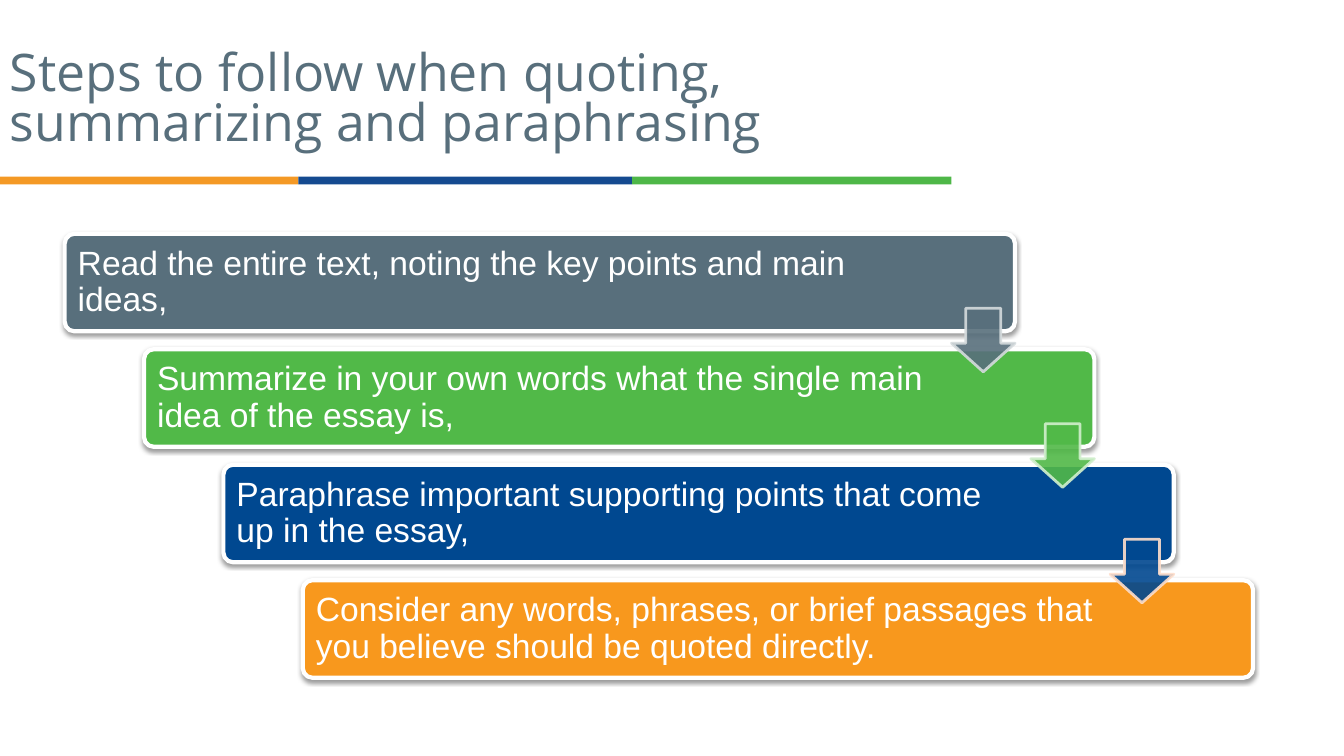
from lxml import etree
from pptx import Presentation
from pptx.dml.color import RGBColor
from pptx.enum.shapes import MSO_SHAPE
from pptx.enum.text import MSO_ANCHOR
from pptx.oxml.ns import qn
from pptx.util import Cm, Pt

RECTANGLE = MSO_SHAPE.RECTANGLE
ROUNDED = MSO_SHAPE.ROUNDED_RECTANGLE
DOWN_ARROW = MSO_SHAPE.DOWN_ARROW
TOP, MIDDLE = MSO_ANCHOR.TOP, MSO_ANCHOR.MIDDLE

WHITE = RGBColor(0xFF, 0xFF, 0xFF)
SLATE = RGBColor(0x58, 0x6F, 0x7C)
GREEN = RGBColor(0x51, 0xB9, 0x48)
BLUE = RGBColor(0x00, 0x48, 0x90)
ORANGE = RGBColor(0xF8, 0x98, 0x1D)
BAR_ORANGE = RGBColor(0xF4, 0x99, 0x25)
BAR_BLUE = RGBColor(0x15, 0x4A, 0x90)
BAR_GREEN = RGBColor(0x4E, 0xB7, 0x48)
PALE_SLATE = RGBColor(0xD5, 0xDB, 0xDD)
PALE_GREEN = RGBColor(0xD1, 0xEF, 0xCD)
PALE_ORANGE = RGBColor(0xFE, 0xDE, 0xCB)

BARS = [(0, 7.52, BAR_ORANGE), (7.52, 8.41, BAR_BLUE), (15.93, 8.05, BAR_GREEN)]
STEPS = [
    ("Read the entire text, noting the key points and main ideas,", SLATE, 21.08),
    ("Summarize in your own words what the single main idea of the essay is,", GREEN, 20.2),
    ("Paraphrase important supporting points that come up in the essay,", BLUE, 20.2),
    ("Consider any words, phrases, or brief passages that you believe should be quoted directly.",
     ORANGE, 20.2),
]
ARROW_COLORS = [(SLATE, PALE_SLATE), (GREEN, PALE_GREEN), (BLUE, PALE_ORANGE)]
STEP_LEFT, STEP_TOP = 1.63, 5.89
SHIFT_RIGHT, SHIFT_DOWN = 2.0, 2.91


class StepSlide:
    """Draws the staircase of steps on one slide in a shared style."""

    def __init__(self, presentation):
        self.slide = presentation.slides.add_slide(presentation.slide_layouts[6])

    def block(self, kind, left, top, width, height, fill, outline=None, weight=0):
        shape = self.slide.shapes.add_shape(kind, Cm(left), Cm(top), Cm(width), Cm(height))
        shape.shadow.inherit = False
        shape.fill.solid()
        shape.fill.fore_color.rgb = fill
        if outline is None:
            shape.line.fill.background()
        else:
            shape.line.color.rgb = outline
            shape.line.width = Pt(weight)
        return shape

    def text(self, words, left, top, width, height, font, size, color, spacing, anchor, inset):
        box = self.slide.shapes.add_textbox(Cm(left), Cm(top), Cm(width), Cm(height))
        frame = box.text_frame
        frame.word_wrap = True
        frame.vertical_anchor = anchor
        frame.margin_left = frame.margin_right = Cm(0.25)
        frame.margin_top = frame.margin_bottom = Cm(inset)
        paragraph = frame.paragraphs[0]
        paragraph.text = words
        paragraph.line_spacing = spacing
        paragraph.font.name = font
        paragraph.font.size = Pt(size)
        paragraph.font.color.rgb = color

    def step(self, words, left, top, fill, text_width):
        shape = self.block(ROUNDED, left, top, 23.95, 2.46, fill, WHITE, 3)
        shape.adjustments[0] = 0.1
        effects = shape._element.spPr.find(qn("a:effectLst"))
        shadow = etree.SubElement(effects, qn("a:outerShdw"), blurRad=str(Pt(3.1)),
                                  dist=str(Pt(1.6)), dir="5400000", rotWithShape="0")
        color = etree.SubElement(shadow, qn("a:srgbClr"), val="000000")
        etree.SubElement(color, qn("a:alpha"), val="38000")
        self.text(words, left + 0.08, top + 0.08, text_width, 2.31,
                  "Arial", 24, WHITE, 0.9, MIDDLE, 0.25)

    def arrow(self, left, top, fill, outline):
        shape = self.block(DOWN_ARROW, left, top, 1.6, 1.6, fill, outline, 2)
        shape.adjustments[0] = 0.45
        shape.adjustments[0], shape.adjustments[1] = 0.55, 0.45
        for color in shape._element.spPr.iter(qn("a:srgbClr")):
            etree.SubElement(color, qn("a:alpha"), val="90000")


def main():
    presentation = Presentation()
    presentation.slide_width = Cm(33.87)
    presentation.slide_height = Cm(19.05)
    page = StepSlide(presentation)

    for left, width, color in BARS:
        page.block(RECTANGLE, left, 4.45, width, 0.2, color)
    page.text("Steps to follow when quoting, summarizing and paraphrasing",
              0, 1.17, 22.63, 3, "Open Sans", 37, SLATE, 0.8, TOP, 0.13)

    for index, (words, color, text_width) in enumerate(STEPS):
        page.step(words, STEP_LEFT + index * SHIFT_RIGHT, STEP_TOP + index * SHIFT_DOWN,
                  color, text_width)
    for index, (color, outline) in enumerate(ARROW_COLORS):
        page.arrow(STEP_LEFT + 22.35 + index * SHIFT_RIGHT,
                   STEP_TOP + 1.88 + index * SHIFT_DOWN, color, outline)

    presentation.save("out.pptx")


if __name__ == "__main__":
    main()
